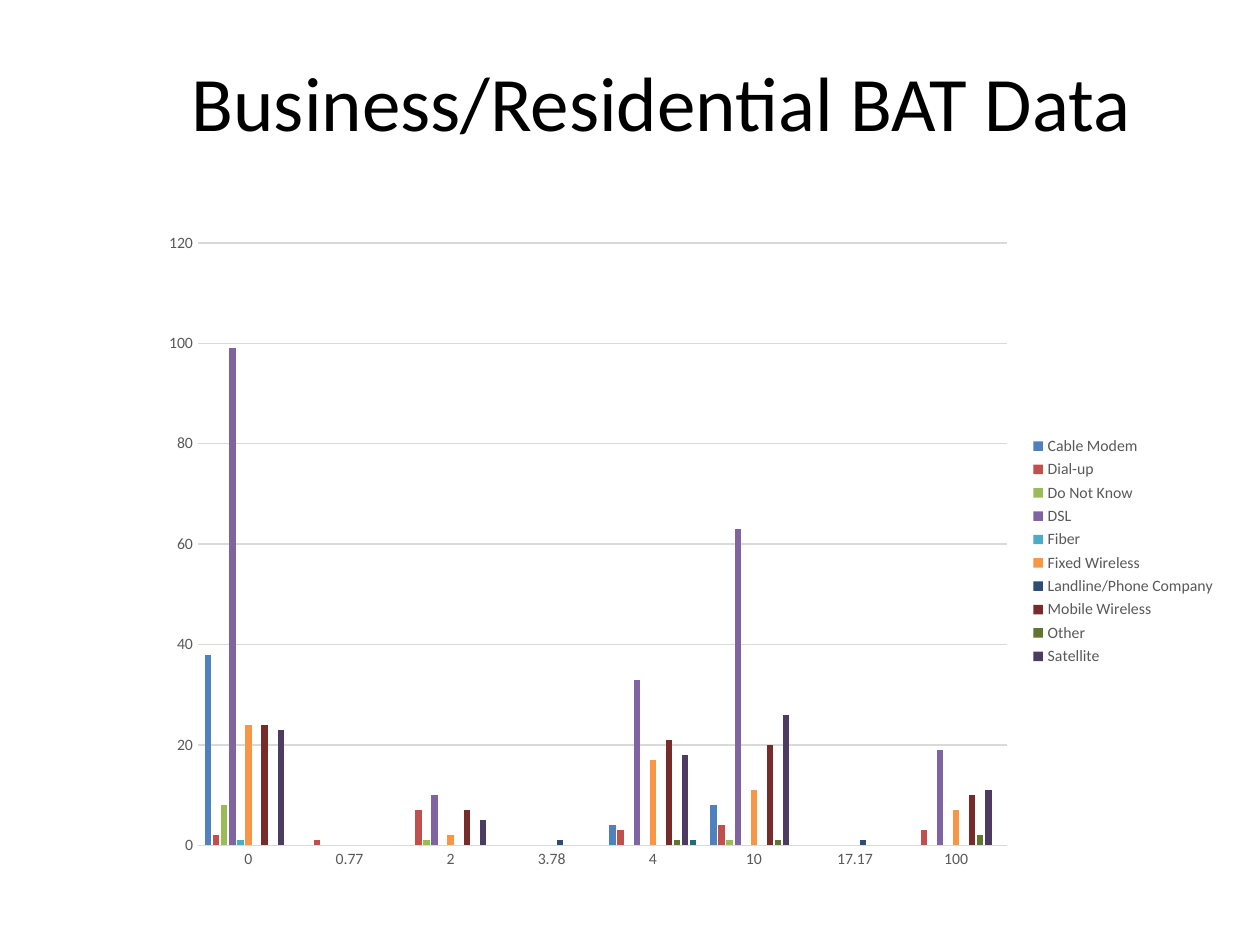
from lxml import etree
from pptx import Presentation
from pptx.chart.data import CategoryChartData
from pptx.dml.color import RGBColor
from pptx.enum.chart import XL_CHART_TYPE, XL_LEGEND_POSITION, XL_TICK_MARK
from pptx.enum.text import MSO_ANCHOR, PP_ALIGN
from pptx.oxml.ns import qn
from pptx.util import Inches, Pt

COLUMNS = XL_CHART_TYPE.COLUMN_CLUSTERED
LEGEND_RIGHT = XL_LEGEND_POSITION.RIGHT
NO_TICK = XL_TICK_MARK.NONE
MIDDLE = MSO_ANCHOR.MIDDLE
CENTER = PP_ALIGN.CENTER

FONT = "Calibri"
BLACK = RGBColor(0x00, 0x00, 0x00)
GRAY = RGBColor(0x59, 0x59, 0x59)
LIGHT_GRAY = RGBColor(0xD9, 0xD9, 0xD9)

TITLE = "Business/Residential BAT Data"
SPEEDS = ["0", "0.77", "2", "3.78", "4", "10", "17.17", "100"]
UNNAMED = "Series 11"  # plotted, but kept out of the legend
# connection type, colour, answers by speed
CONNECTIONS = [
    ("Cable Modem", RGBColor(0x4F, 0x81, 0xBD), {"0": 38, "4": 4, "10": 8}),
    ("Dial-up", RGBColor(0xC0, 0x50, 0x4D),
     {"0": 2, "0.77": 1, "2": 7, "4": 3, "10": 4, "100": 3}),
    ("Do Not Know", RGBColor(0x9B, 0xBB, 0x59), {"0": 8, "2": 1, "10": 1}),
    ("DSL", RGBColor(0x80, 0x64, 0xA2),
     {"0": 99, "2": 10, "4": 33, "10": 63, "100": 19}),
    ("Fiber", RGBColor(0x4B, 0xAC, 0xC6), {"0": 1}),
    ("Fixed Wireless", RGBColor(0xF7, 0x96, 0x46),
     {"0": 24, "2": 2, "4": 17, "10": 11, "100": 7}),
    ("Landline/Phone Company", RGBColor(0x2C, 0x4D, 0x75),
     {"3.78": 1, "17.17": 1}),
    ("Mobile Wireless", RGBColor(0x77, 0x2C, 0x2A),
     {"0": 24, "2": 7, "4": 21, "10": 20, "100": 10}),
    ("Other", RGBColor(0x5F, 0x75, 0x30), {"4": 1, "10": 1, "100": 2}),
    ("Satellite", RGBColor(0x4D, 0x3B, 0x62),
     {"0": 23, "2": 5, "4": 18, "10": 26, "100": 11}),
    (UNNAMED, RGBColor(0x27, 0x6A, 0x7C), {"4": 1}),
]


def style_font(font, size, color):
    font.name = FONT
    font.size = Pt(size)
    font.color.rgb = color


def style_line(line):
    line.color.rgb = LIGHT_GRAY
    line.width = Pt(0.75)


def add_title(slide):
    box = slide.shapes.add_textbox(Inches(0.75), Inches(0.17),
                                   Inches(9), Inches(1.25))
    frame = box.text_frame
    frame.word_wrap = True
    frame.vertical_anchor = MIDDLE
    para = frame.paragraphs[0]
    para.alignment = CENTER
    span = para.add_run()
    span.text = TITLE
    style_font(span.font, 44, BLACK)


def hide_legend_entry(legend, index):
    entry = etree.Element(qn("c:legendEntry"))
    etree.SubElement(entry, qn("c:idx")).set("val", str(index))
    etree.SubElement(entry, qn("c:delete")).set("val", "1")
    legend._element.find(qn("c:legendPos")).addnext(entry)


def add_answer_chart(slide):
    data = CategoryChartData()
    data.categories = SPEEDS
    for name, _, answers in CONNECTIONS:
        data.add_series(name, [answers.get(speed) for speed in SPEEDS])
    chart = slide.shapes.add_chart(COLUMNS, Inches(1.17), Inches(1.75),
                                   Inches(8.58), Inches(5.25), data).chart
    chart.has_title = False
    style_font(chart.font, 10, BLACK)

    plot = chart.plots[0]
    plot.vary_by_categories = False
    plot.gap_width = 219
    plot.overlap = -27
    for series, (_, color, _) in zip(plot.series, CONNECTIONS):
        series.format.fill.solid()
        series.format.fill.fore_color.rgb = color

    for axis in (chart.category_axis, chart.value_axis):
        axis.major_tick_mark = axis.minor_tick_mark = NO_TICK
        style_font(axis.tick_labels.font, 9, GRAY)
    style_line(chart.category_axis.format.line)
    chart.value_axis.format.line.fill.background()
    style_line(chart.value_axis.major_gridlines.format.line)

    chart.has_legend = True
    legend = chart.legend
    legend.position = LEGEND_RIGHT
    legend.include_in_layout = False
    style_font(legend.font, 9, GRAY)
    names = [name for name, _, _ in CONNECTIONS]
    hide_legend_entry(legend, names.index(UNNAMED))


def main():
    deck = Presentation()
    deck.slide_width = Inches(10)
    deck.slide_height = Inches(7.5)
    slide = deck.slides.add_slide(deck.slide_layouts[6])
    add_title(slide)
    add_answer_chart(slide)
    deck.save("out.pptx")


if __name__ == "__main__":
    main()
